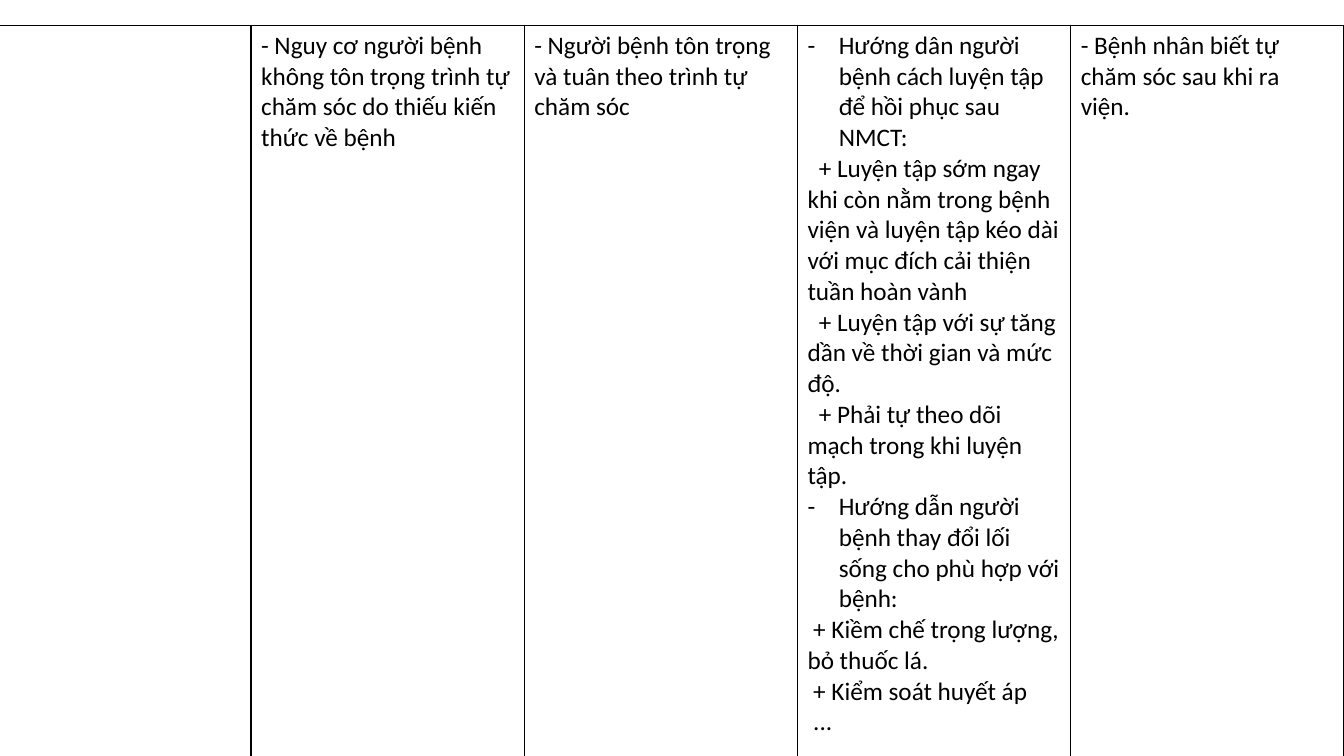
import pptx
import pptx.util
import pptx.dml.color
import pptx.oxml.ns
from lxml import etree

Inches, Pt = pptx.util.Inches, pptx.util.Pt
BLACK = pptx.dml.color.RGBColor(0, 0, 0)
SLIDE_WIDTH, SLIDE_HEIGHT = 13.33, 7.5
COLUMN_WIDTH = 2.71
ROW_HEIGHTS = [8.21, 0.4, 0.4]
DASH_INDENT = 0.31
SPACE = 0.056

DIAGNOSIS = [("- Nguy cơ người bệnh không tôn trọng trình tự chăm sóc do thiếu kiến thức về bệnh", 0)]
GOAL = [("- Người bệnh tôn trọng và tuân theo trình tự chăm sóc", 0)]
CARE_PLAN = [
    ("Hướng dân người bệnh cách luyện tập để hồi phục sau NMCT:", -DASH_INDENT),
    ("+ Luyện tập sớm ngay khi còn nằm trong bệnh viện và luyện tập kéo dài "
     "với mục đích cải thiện tuần hoàn vành", 2 * SPACE),
    ("+ Luyện tập với sự tăng dần về thời gian và mức độ.", 2 * SPACE),
    ("+ Phải tự theo dõi mạch trong khi luyện tập.", 2 * SPACE),
    ("Hướng dẫn người bệnh thay đổi lối sống cho phù hợp với bệnh:", -DASH_INDENT),
    ("+ Kiềm chế trọng lượng, bỏ thuốc lá.", SPACE),
    ("+ Kiểm soát huyết áp", SPACE),
    ("...", SPACE),
]
EVALUATION = [("- Bệnh nhân biết tự chăm sóc sau khi ra viện.", 0)]
CARE_COLUMNS = [[], DIAGNOSIS, GOAL, CARE_PLAN, EVALUATION]


def add_element(parent, tag, **attributes):
    return etree.SubElement(parent, pptx.oxml.ns.qn(tag), **attributes)


def style_cell(cell):
    properties = cell._tc.get_or_add_tcPr()
    for side in ("a:lnL", "a:lnR", "a:lnT", "a:lnB"):
        border = add_element(properties, side, w=str(Pt(1)))
        color = add_element(border, "a:solidFill")
        add_element(color, "a:srgbClr", val=str(BLACK))
    cell.fill.background()


def set_indent(paragraph, first_line):
    properties = paragraph._p.get_or_add_pPr()
    properties.set("marL", str(Inches(max(-first_line, 0))))
    properties.set("indent", str(Inches(first_line)))
    if first_line < 0:
        add_element(properties, "a:buFont", typeface="Calibri")
        add_element(properties, "a:buChar", char="-")


def write_cell(cell, lines):
    frame = cell.text_frame
    frame.text = "\n".join(text for text, _ in lines)
    for paragraph, (_, first_line) in zip(frame.paragraphs, lines):
        if first_line:
            set_indent(paragraph, first_line)
        for run in paragraph.runs:
            run.font.name = "Calibri"
            run.font.size = Pt(18)
            run.font.color.rgb = BLACK


def add_care_table(slide, left, top):
    column_count = len(CARE_COLUMNS)
    care_table = slide.shapes.add_table(
        len(ROW_HEIGHTS), column_count, Inches(left), Inches(top),
        Inches(column_count * COLUMN_WIDTH), Inches(sum(ROW_HEIGHTS))).table
    care_table.first_row = False
    care_table.horz_banding = False
    for column in care_table.columns:
        column.width = Inches(COLUMN_WIDTH)
    for row, height in zip(care_table.rows, ROW_HEIGHTS):
        row.height = Inches(height)
    for cell in care_table.iter_cells():
        style_cell(cell)
    for index, lines in enumerate(CARE_COLUMNS):
        write_cell(care_table.cell(0, index), lines)


def main():
    deck = pptx.Presentation()
    deck.slide_width = Inches(SLIDE_WIDTH)
    deck.slide_height = Inches(SLIDE_HEIGHT)
    slide = deck.slides.add_slide(deck.slide_layouts[6])
    table_width = len(CARE_COLUMNS) * COLUMN_WIDTH
    add_care_table(slide, SLIDE_WIDTH - table_width, SLIDE_HEIGHT / 30)
    deck.save("out.pptx")


if __name__ == "__main__":
    main()
